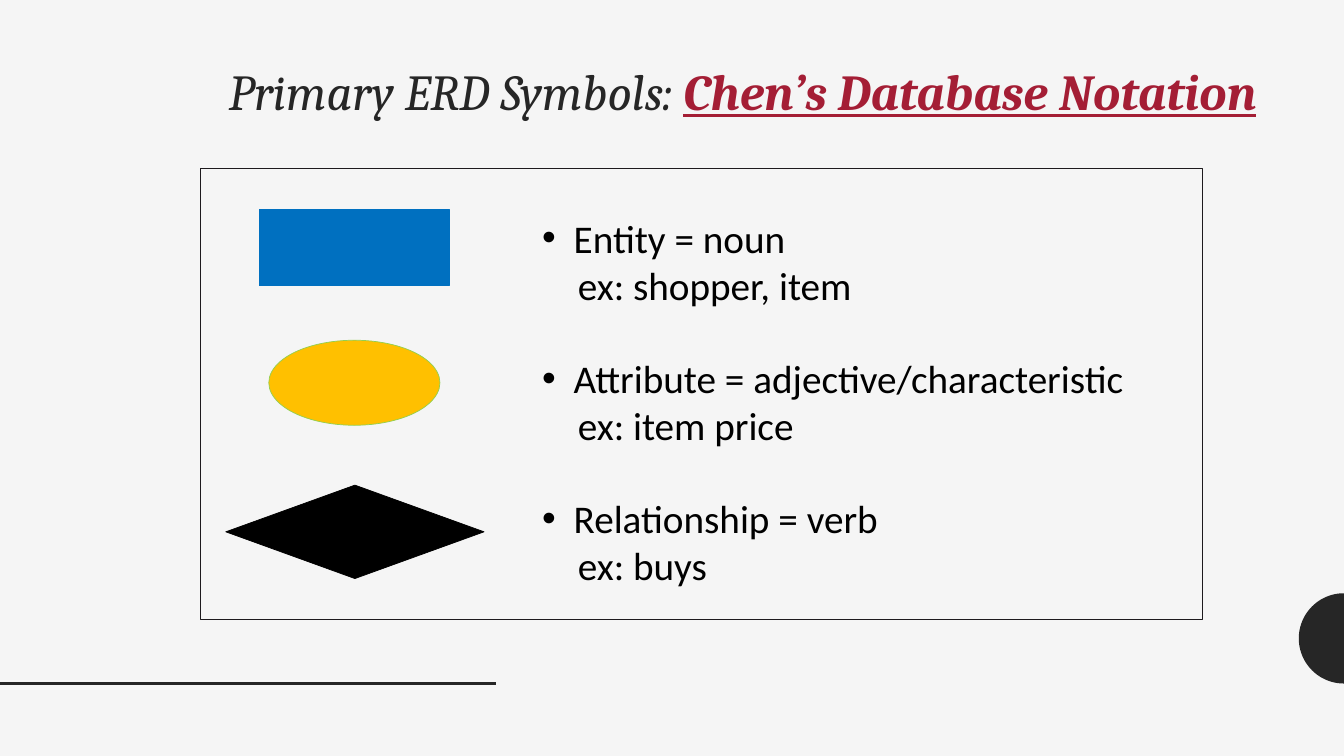
import math

from lxml import etree
from pptx import Presentation
from pptx import util as u
from pptx.dml.color import RGBColor
from pptx.enum import shapes, text
from pptx.oxml.ns import qn

EMU_PER_PX = 9525
WIDTH, HEIGHT = 1280, 720
DARK = "262626"

SYMBOLS = [
    # preset shape, box inside the frame, fill, line
    (shapes.MSO_SHAPE.FLOWCHART_PROCESS, (56, 39, 181, 73), "0070C0", "0070C0"),
    (shapes.MSO_SHAPE.OVAL, (65, 164, 163, 81), "FFC000", "92D050"),
    (shapes.MSO_SHAPE.FLOWCHART_DECISION, (24, 302, 246, 89), "000000", "000000"),
]
MEANINGS = [
    ("Entity = noun", "ex: shopper, item"),
    ("Attribute = adjective/characteristic", "ex: item price"),
    ("Relationship = verb", "ex: buys"),
]


def px(length):
    return u.Emu(round(length * EMU_PER_PX))


def color(value):
    return RGBColor.from_string(value)


def add_symbol(slide, preset, box, fill, line):
    shape = slide.shapes.add_shape(preset, *map(px, box))
    shape.shadow.inherit = False
    if fill:
        shape.fill.solid()
        shape.fill.fore_color.rgb = color(fill)
    else:
        shape.fill.background()
    shape.line.color.rgb = color(line)
    shape.line.width = u.Pt(0.5)


def add_text_frame(slide, box):
    frame = slide.shapes.add_textbox(*map(px, box)).text_frame
    frame.word_wrap = True
    return frame


def draw_half_disc(slide, box):
    """Half disc whose flat side is the right edge of the box."""
    left, top, width, height = box
    steps = 48
    points = []
    for step in range(steps + 1):
        angle = math.pi * step / steps
        points.append((px(left + width * (1 - math.sin(angle))),
                       px(top + height / 2 * (1 - math.cos(angle)))))
    builder = slide.shapes.build_freeform(*points[0])
    builder.add_line_segments(points[1:], close=True)
    disc = builder.convert_to_shape()
    disc.shadow.inherit = False
    disc.fill.solid()
    disc.fill.fore_color.rgb = color(DARK)
    disc.line.fill.background()


def draw_rule(slide, left, top, width):
    rule = slide.shapes.add_connector(
        shapes.MSO_CONNECTOR.STRAIGHT, px(left), px(top), px(left + width), px(top))
    rule.line.color.rgb = color(DARK)
    rule.line.width = u.Pt(2)
    etree.SubElement(rule._element.spPr, qn("a:effectLst"))


def draw_title(slide, box):
    para = add_text_frame(slide, box).paragraphs[0]
    para.alignment = text.PP_ALIGN.RIGHT
    para.line_spacing = 0.9
    para.font.name = "Cambria"
    para.font.size = u.Pt(36)
    para.font.italic = True
    lead = para.add_run()
    lead.text = "Primary ERD Symbols: "
    lead.font.color.rgb = color(DARK)
    topic = para.add_run()
    topic.text = "Chen’s Database Notation"
    topic.font.color.rgb = color("A41E35")
    topic.font.bold = True
    topic.font.underline = True


def set_indent(para, margin, bullet=None):
    properties = para._p.get_or_add_pPr()
    properties.set("marL", str(px(margin)))
    properties.set("indent", str(px(-margin if bullet else 0)))
    if bullet:
        font = etree.SubElement(properties, qn("a:buFont"))
        font.set("typeface", "Arial")
        etree.SubElement(properties, qn("a:buChar")).set("char", bullet)


def draw_meanings(slide, box):
    frame = add_text_frame(slide, box)
    for index, (meaning, example) in enumerate(MEANINGS):
        for line, margin, bullet in ((meaning, 30, "•"), (example, 34, None)):
            first = index == 0 and bullet
            para = frame.paragraphs[0] if first else frame.add_paragraph()
            para.text = line
            set_indent(para, margin, bullet)
            if index and bullet:
                para.space_before = u.Pt(33)
            para.font.name = "Calibri"
            para.font.size = u.Pt(28)
            para.font.color.rgb = color("000000")


def draw_legend(slide, box):
    left, top, width, height = box
    add_symbol(slide, shapes.MSO_SHAPE.FLOWCHART_PROCESS, box, None, "1D1A1D")
    for preset, (x, y, w, h), fill, line in SYMBOLS:
        add_symbol(slide, preset, (left + x, top + y, w, h), fill, line)
    draw_meanings(slide, (left + 316, top + 39, width - 316, height - 58))


def main():
    deck = Presentation()
    deck.slide_width, deck.slide_height = px(WIDTH), px(HEIGHT)
    slide = deck.slides.add_slide(deck.slide_layouts[6])
    slide.background.fill.solid()
    slide.background.fill.fore_color.rgb = color("F5F5F5")
    draw_half_disc(slide, (WIDTH - 43, 565, 43, 86))
    draw_rule(slide, 0, 651, 472)
    draw_title(slide, (0, 59, 1206, 120))
    draw_legend(slide, (191, 160, 954, 430))
    deck.save("out.pptx")


if __name__ == "__main__":
    main()
